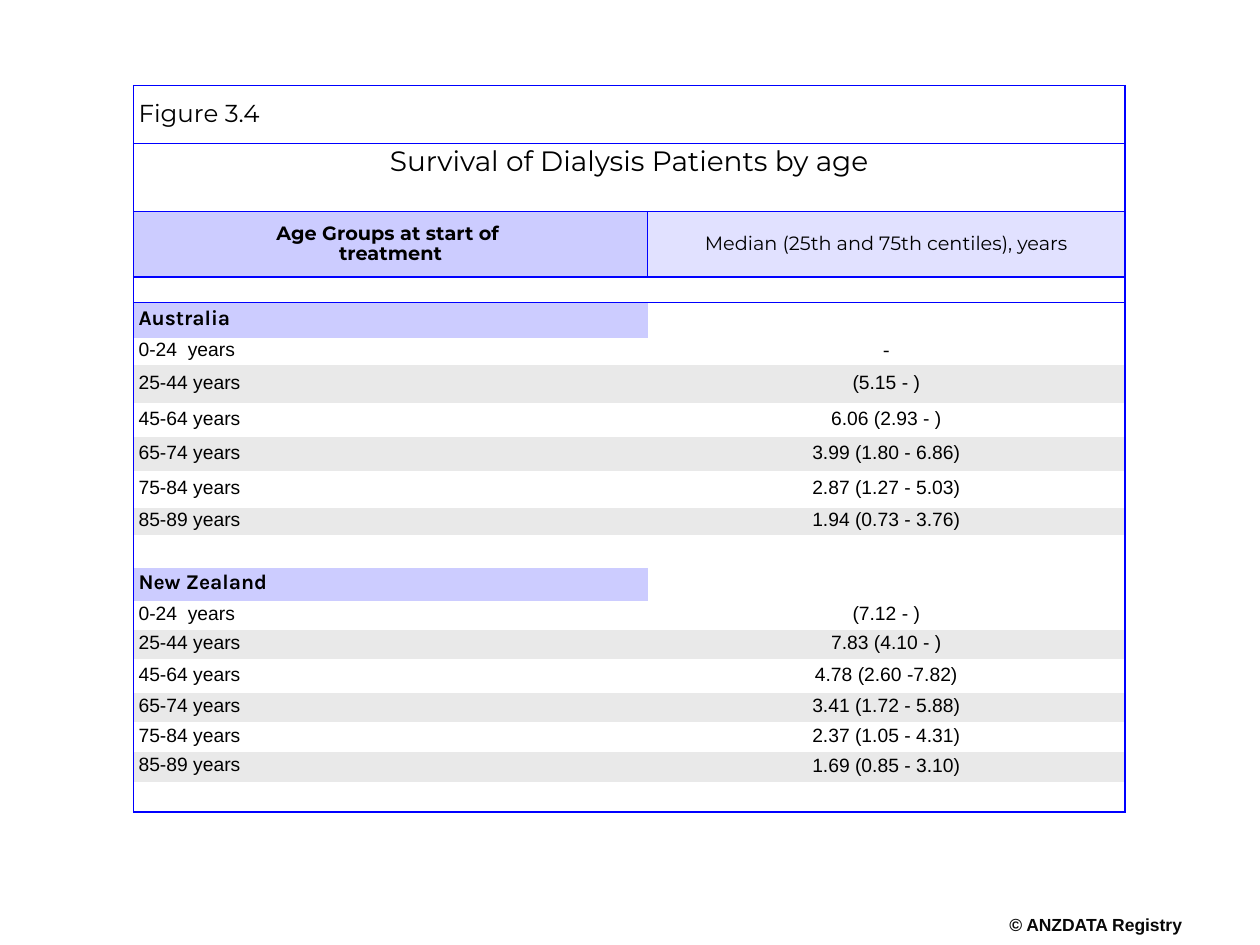
from lxml.etree import SubElement
from pptx import Presentation
from pptx.dml.color import RGBColor
from pptx.enum.text import MSO_ANCHOR, PP_ALIGN
from pptx.oxml.ns import qn
from pptx.util import Inches, Pt

COLORS = {
    "border": "0000FF",
    "heading": "CCCCFF",
    "median": "E1E1FF",
    "band": "E9E9E9",
    "text": "000000",
    "credit": "080808",
}
COLUMN_WIDTHS = [4.08, 3.79]
ROW_HEIGHTS = [0.46, 0.54, 0.52,
               0.2, 0.28, 0.22, 0.3, 0.27, 0.27, 0.29, 0.22,
               0.26, 0.26, 0.23, 0.23, 0.27, 0.23, 0.24, 0.24, 0.24]
AGE_GROUPS = ["0-24  years", "25-44 years", "45-64 years",
              "65-74 years", "75-84 years", "85-89 years"]
SURVIVAL = {
    "Australia": ["-", "(5.15 - )", "6.06 (2.93 - )", "3.99 (1.80 - 6.86)",
                  "2.87 (1.27 - 5.03)", "1.94 (0.73 - 3.76)"],
    "New Zealand": ["(7.12 - )", "7.83 (4.10 - )", "4.78 (2.60 -7.82)",
                    "3.41 (1.72 - 5.88)", "2.37 (1.05 - 4.31)", "1.69 (0.85 - 3.10)"],
}
NO_STYLE = "{2D5ABB26-0587-4C30-8999-92F81FD0307C}"
CENTER = PP_ALIGN.CENTER


def write_text(frame, text, size, font="Arial", bold=False, align=PP_ALIGN.LEFT,
               spacing=0.85, color="text"):
    """Put one formatted paragraph into a text frame."""
    para = frame.paragraphs[0]
    para.text = text
    para.alignment = align
    para.line_spacing = spacing
    for span in para.runs:
        span.font.size = Pt(size)
        span.font.name = font
        span.font.bold = bold
        span.font.color.rgb = RGBColor.from_string(COLORS[color])


def fill_cell(cell, text, size, fill=None, inset=0.02, anchor=MSO_ANCHOR.MIDDLE, **style):
    """Write a table cell and colour its background."""
    cell.margin_left = cell.margin_right = Inches(0.04)
    cell.margin_top = cell.margin_bottom = Inches(inset)
    cell.vertical_anchor = anchor
    write_text(cell.text_frame, text, size, **style)
    if fill:
        cell.fill.solid()
        cell.fill.fore_color.rgb = RGBColor.from_string(COLORS[fill])


def clear_cell(cell):
    """Keep an empty cell from stretching its row."""
    cell.margin_top = cell.margin_bottom = Inches(0.02)
    para = cell.text_frame.paragraphs[0]
    SubElement(para._p, qn("a:endParaRPr")).set("sz", "800")


def draw_borders(cell, sides):
    """Draw the given sides of a cell, listed in the order L, R, T, B."""
    properties = cell._tc.get_or_add_tcPr()
    for position, side in enumerate(sides):
        line = properties.makeelement(qn(f"a:ln{side}"), {"w": str(Pt(1))})
        color = SubElement(SubElement(line, qn("a:solidFill")), qn("a:srgbClr"))
        color.set("val", COLORS["border"])
        properties.insert(position, line)


def frame_table(table):
    """Box the three heading rows and outline the whole body."""
    last = len(ROW_HEIGHTS) - 1
    for row in range(last + 1):
        for column, outer in enumerate("LR"):
            sides = "LRTB" if row < 3 else outer
            if row == 3:
                sides += "T"
            if row == last:
                sides += "B"
            draw_borders(table.cell(row, column), sides)


def add_headings(table):
    """Fill the figure number, the title and the column headings."""
    for row in range(2):
        table.cell(row, 0).merge(table.cell(row, 1))
    fill_cell(table.cell(0, 0), "Figure 3.4", 14, inset=0.04, font="Montserrat")
    fill_cell(table.cell(1, 0), "Survival of Dialysis Patients by age", 16, inset=0.04,
              anchor=MSO_ANCHOR.TOP, font="Montserrat", align=CENTER)
    fill_cell(table.cell(2, 0), "Age Groups at start of \vtreatment", 11, "heading",
              font="Montserrat", bold=True, align=CENTER)
    fill_cell(table.cell(2, 1), "Median (25th and 75th centiles), years", 11, "median",
              font="Montserrat", align=CENTER)


def add_country(table, row, country, medians):
    """Fill a country heading and its age groups, banding every second row."""
    fill_cell(table.cell(row, 0), country, 12, "heading", font="Karla", bold=True, spacing=0.75)
    clear_cell(table.cell(row, 1))
    for index, (ages, median) in enumerate(zip(AGE_GROUPS, medians)):
        fill = "band" if index % 2 else None
        spacing = 0.75 if ages == AGE_GROUPS[-1] else 0.85
        font = "Times New Roman" if median == "-" else "Arial"
        fill_cell(table.cell(row + 1 + index, 0), ages, 11, fill, spacing=spacing)
        fill_cell(table.cell(row + 1 + index, 1), median, 11, fill, font=font, align=CENTER)


def add_survival_table(page):
    """Build the table of survival by country and age."""
    shape = page.shapes.add_table(len(ROW_HEIGHTS), len(COLUMN_WIDTHS), Inches(1.06),
                                  Inches(0.68), Inches(7.87), Inches(5.77))
    table = shape.table
    table.first_row = table.horz_banding = False
    table._tbl.tblPr.find(qn("a:tableStyleId")).text = NO_STYLE
    for column, width in zip(table.columns, COLUMN_WIDTHS):
        column.width = Inches(width)
    for row, height in zip(table.rows, ROW_HEIGHTS):
        row.height = Inches(height)
    add_headings(table)
    block = len(AGE_GROUPS) + 2
    for index, (country, medians) in enumerate(SURVIVAL.items()):
        add_country(table, 4 + index * block, country, medians)
    for row in range(3, len(ROW_HEIGHTS), block):
        for column in range(2):
            clear_cell(table.cell(row, column))
    frame_table(table)


def add_credit(page):
    """Add the registry's copyright line."""
    box = page.shapes.add_textbox(Inches(7.99), Inches(7.28), Inches(1.41), Inches(0.17))
    frame = box.text_frame
    frame.margin_left = frame.margin_right = frame.margin_top = frame.margin_bottom = 0
    frame.word_wrap = False
    write_text(frame, "© ANZDATA Registry", 10, bold=True, align=CENTER, color="credit")


def main():
    """Build and save the slide."""
    deck = Presentation()
    deck.slide_width, deck.slide_height = Inches(10), Inches(7.5)
    page = deck.slides.add_slide(deck.slide_layouts[6])
    add_credit(page)
    add_survival_table(page)
    deck.save("out.pptx")


if __name__ == "__main__":
    main()
